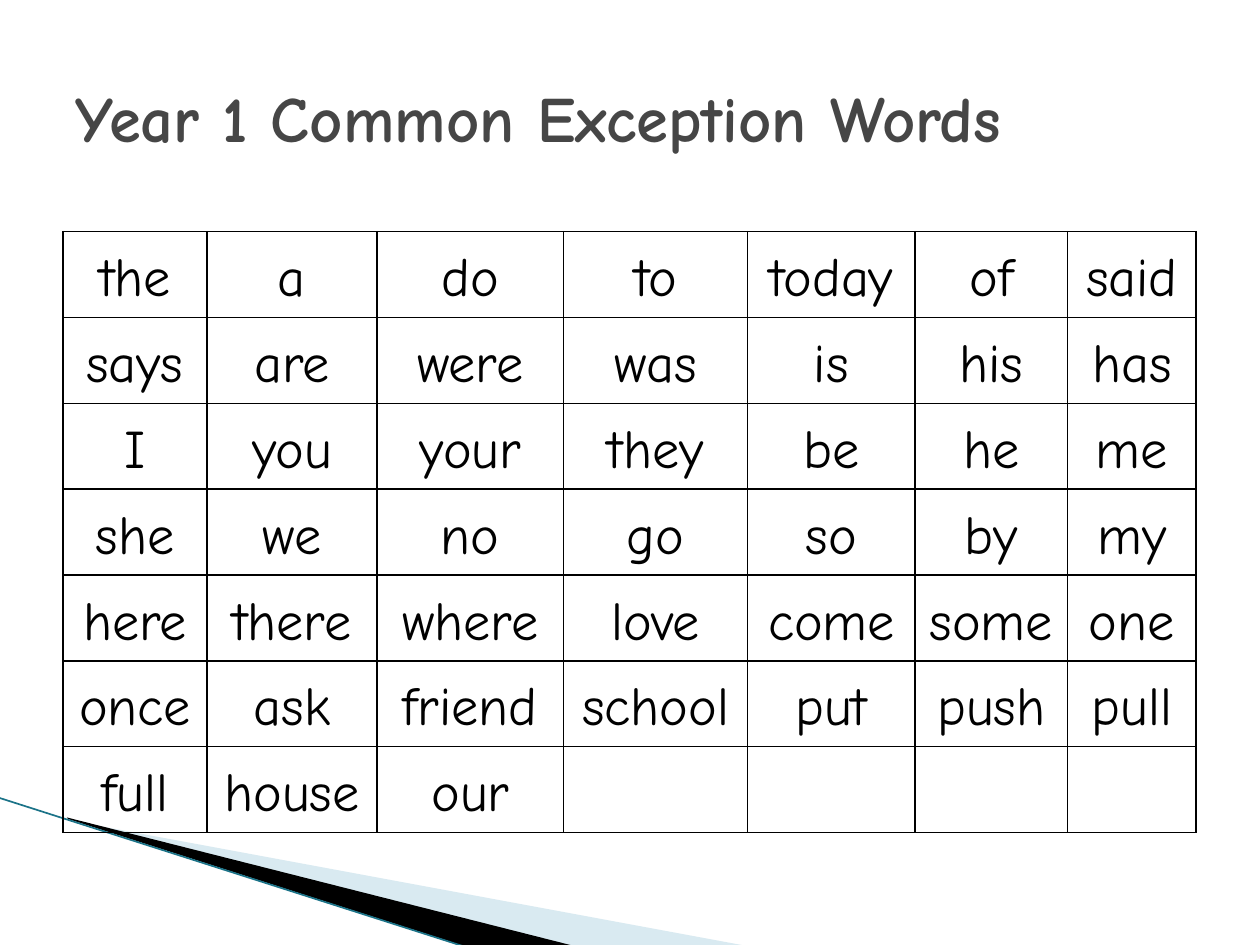
from lxml import etree
from pptx import Presentation
from pptx.dml.color import RGBColor
from pptx.enum.shapes import MSO_CONNECTOR
from pptx.enum.text import MSO_ANCHOR, PP_ALIGN
from pptx.oxml import parse_xml
from pptx.oxml.ns import qn
from pptx.util import Cm, Pt

STRAIGHT = MSO_CONNECTOR.STRAIGHT
MIDDLE = MSO_ANCHOR.MIDDLE
CENTER = PP_ALIGN.CENTER

FONT = "Comic Neue"
BLACK = RGBColor(0x00, 0x00, 0x00)
GREY = RGBColor(0x46, 0x46, 0x46)
PALE_BLUE = RGBColor(0xA0, 0xCB, 0xDC)
TEAL = RGBColor(0x1B, 0x73, 0x88)

WORDS = [
    "the a do to today of said",
    "says are were was is his has",
    "I you your they be he me",
    "she we no go so by my",
    "here there where love come some one",
    "once ask friend school put push pull",
    "full house our",
]
COL_WIDTHS = [2.9, 3.43, 3.76, 3.71, 3.38, 3.07, 2.59]
ROW_HEIGHT = 1.73
BORDER = (
    '<a:{} xmlns:a="http://schemas.openxmlformats.org/drawingml/2006/main" w="12700">'
    '<a:solidFill><a:srgbClr val="{}"/></a:solidFill></a:{}>'
)


def add_run(p, text, size, color, bold=False):
    r = p.add_run()
    r.text = text
    r.font.name = FONT
    r.font.size = Pt(size)
    r.font.bold = bold
    r.font.color.rgb = color


def add_wedge(s, points, color, opacity=None):
    start, *rest = [(Cm(x), Cm(y)) for x, y in points]
    builder = s.shapes.build_freeform(*start)
    builder.add_line_segments(rest, close=True)
    sp = builder.convert_to_shape()
    sp.shadow.inherit = False
    sp.line.fill.background()
    sp.fill.solid()
    sp.fill.fore_color.rgb = color
    if opacity is not None:
        clr = sp.fill._xPr.find(".//" + qn("a:srgbClr"))
        etree.SubElement(clr, qn("a:alpha"), val=str(opacity * 1000))


def add_line(s, x1, y1, x2, y2):
    sp = s.shapes.add_connector(STRAIGHT, Cm(x1), Cm(y1), Cm(x2), Cm(y2))
    sp.line.color.rgb = TEAL
    sp.line.width = Pt(0.95)
    etree.SubElement(sp._element.spPr, qn("a:effectLst"))


def add_title(s, text):
    sp = s.shapes.add_textbox(Cm(1.27), Cm(0.76), Cm(22.86), Cm(3.18))
    tf = sp.text_frame
    tf.word_wrap = True
    tf.vertical_anchor = MIDDLE
    add_run(tf.paragraphs[0], text, 36.9, GREY, bold=True)


def format_cell(cell):
    tcPr = cell._tc.get_or_add_tcPr()
    for side in ("lnL", "lnR", "lnT", "lnB"):
        tcPr.append(parse_xml(BORDER.format(side, BLACK, side)))
    cell.fill.background()
    cell.vertical_anchor = MIDDLE
    cell.margin_left = cell.margin_right = Cm(0.15)
    cell.margin_top = cell.margin_bottom = 0


def add_word_table(s):
    frame = s.shapes.add_table(
        len(WORDS), len(COL_WIDTHS), Cm(1.27), Cm(4.67),
        Cm(sum(COL_WIDTHS)), Cm(ROW_HEIGHT * len(WORDS)))
    table = frame.table
    table.first_row = False
    table.horz_banding = False
    for col, width in zip(table.columns, COL_WIDTHS):
        col.width = Cm(width)
    for row, line in zip(table.rows, WORDS):
        row.height = Cm(ROW_HEIGHT)
        for cell in row.cells:
            format_cell(cell)
        for cell, word in zip(row.cells, line.split()):
            p = cell.text_frame.paragraphs[0]
            p.alignment = CENTER
            p.line_spacing = 1.15
            add_run(p, word, 31, BLACK)


def main():
    prs = Presentation()
    prs.slide_width, prs.slide_height = Cm(25.4), Cm(19.05)
    s = prs.slides.add_slide(prs.slide_layouts[6])
    add_wedge(s, [(1.4, 16.54), (15.11, 19.08), (11.58, 19.08), (1.4, 16.51)],
              PALE_BLUE, opacity=40)
    add_wedge(s, [(1.35, 16.48), (11.61, 19.08), (9.45, 19.1), (1.37, 16.51)], BLACK)
    add_line(s, -0.03, 16.08, 9.42, 19.1)
    add_word_table(s)
    add_title(s, "Year 1 Common Exception Words")
    prs.save("out.pptx")


if __name__ == "__main__":
    main()
